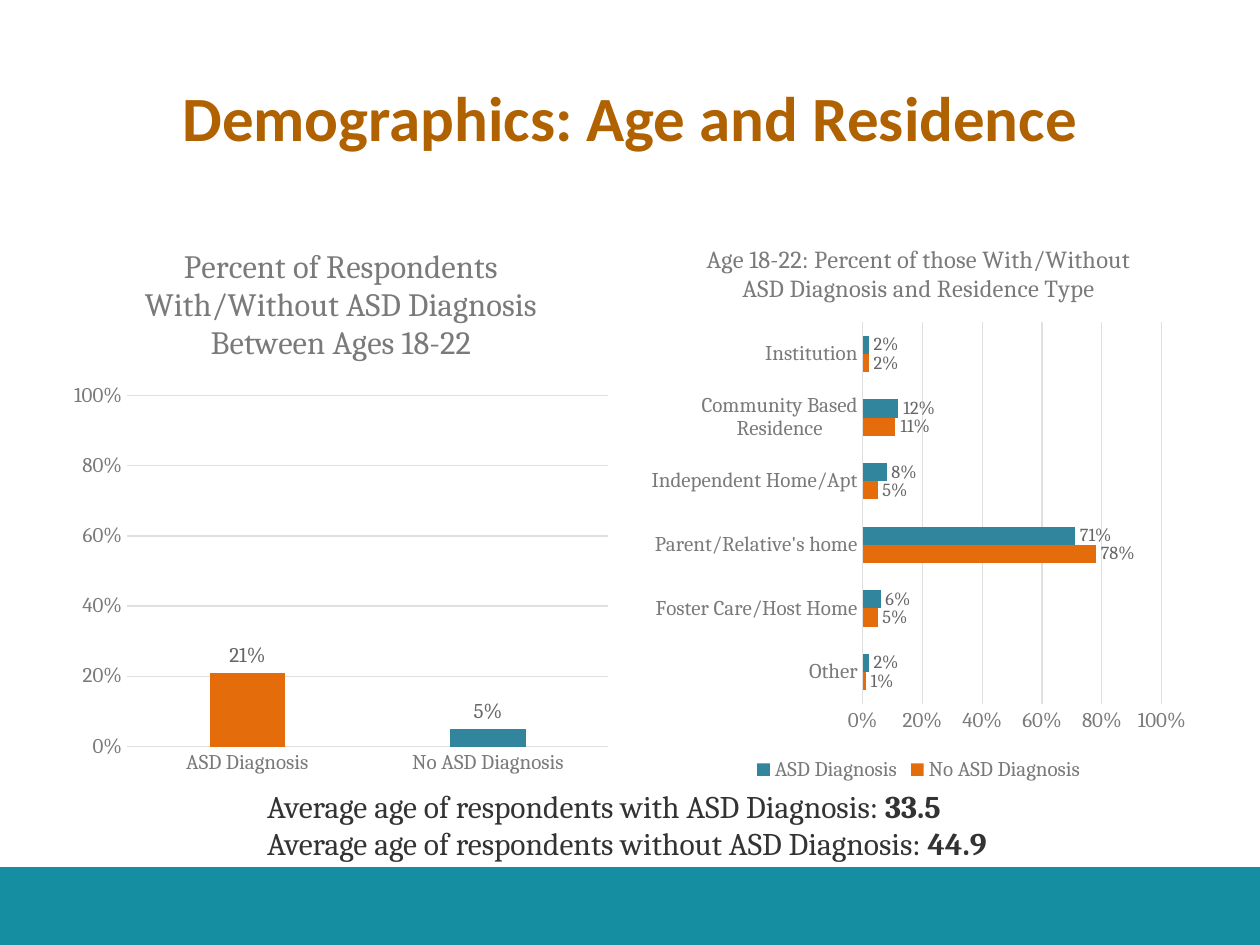
from dataclasses import dataclass, field

import pptx
import pptx.chart.data
import pptx.dml.color
import pptx.enum.chart
import pptx.enum.shapes
import pptx.enum.text
import pptx.util

Pt = pptx.util.Pt
XL = pptx.enum.chart
COLORS = {
    "title": "B06100", "band": "168EA2", "white": "FFFFFF", "text": "333333",
    "axis": "7A7A7A", "label": "666666", "grid": "E0E0E0",
    "asd": "31859C", "no_asd": "E46C0A",
}
BODY_FONT = "Cambria"
CHART_TOP, CHART_WIDTH, CHART_HEIGHT = 126, 318, 323.5


@dataclass
class Series:
    name: str
    values: list[float]
    color: str
    point_colors: dict[int, str] = field(default_factory=dict)


@dataclass
class BarPanel:
    kind: XL.XL_CHART_TYPE
    left: float
    title: str
    title_size: float
    categories: list[str]
    series: list[Series]
    gap: int
    overlap: int
    label_size: float
    legend: bool


def rgb(name: str) -> pptx.dml.color.RGBColor:
    return pptx.dml.color.RGBColor.from_string(COLORS[name])


def set_font(font, size: float, color: str, name: str = BODY_FONT, bold: bool = False) -> None:
    font.size, font.name, font.bold = Pt(size), name, bold
    font.color.rgb = rgb(color)


def set_fill(fill, color: str) -> None:
    fill.solid()
    fill.fore_color.rgb = rgb(color)


def add_box(s, left: float, top: float, width: float, height: float, color: str):
    sp = s.shapes.add_shape(pptx.enum.shapes.MSO_SHAPE.RECTANGLE,
                            Pt(left), Pt(top), Pt(width), Pt(height))
    sp.shadow.inherit = False
    sp.line.fill.background()
    set_fill(sp.fill, color)
    return sp


def set_grid_line(line) -> None:
    line.color.rgb = rgb("grid")
    line.width = Pt(0.75)


def add_bar_panel(s, panel: BarPanel) -> None:
    data = pptx.chart.data.CategoryChartData(number_format="0%")
    data.categories = panel.categories
    for series in panel.series:
        data.add_series(series.name, series.values)
    chart = s.shapes.add_chart(panel.kind, Pt(panel.left), Pt(CHART_TOP),
                               Pt(CHART_WIDTH), Pt(CHART_HEIGHT), data).chart
    set_font(chart.font, 10, "text")

    # Title and legend
    chart.has_title = True
    p = chart.chart_title.text_frame.paragraphs[0]
    p.add_run().text = panel.title
    set_font(p.font, panel.title_size, "axis")
    chart.chart_title.include_in_layout = False
    chart.has_legend = panel.legend
    if panel.legend:
        chart.legend.position = XL.XL_LEGEND_POSITION.BOTTOM
        chart.legend.include_in_layout = False
        set_font(chart.legend.font, 12, "axis")

    # Axes
    for axis in (chart.category_axis, chart.value_axis):
        axis.major_tick_mark = axis.minor_tick_mark = XL.XL_TICK_MARK.NONE
        set_font(axis.tick_labels.font, 12, "axis")
    chart.category_axis.has_major_gridlines = False
    set_grid_line(chart.category_axis.format.line)
    values = chart.value_axis
    values.minimum_scale, values.maximum_scale, values.major_unit = 0, 1, 0.2
    values.tick_labels.number_format = "0%"
    values.tick_labels.number_format_is_linked = False
    values.format.line.fill.background()
    values.has_major_gridlines = True
    set_grid_line(values.major_gridlines.format.line)

    # Bars and their labels
    plot = chart.plots[0]
    plot.gap_width, plot.overlap, plot.vary_by_categories = panel.gap, panel.overlap, False
    for bars, series in zip(plot.series, panel.series):
        bars.invert_if_negative = False
        set_fill(bars.format.fill, series.color)
        for index, color in series.point_colors.items():
            set_fill(bars.points[index].format.fill, color)
        labels = bars.data_labels
        labels.show_value = True
        labels.position = XL.XL_LABEL_POSITION.OUTSIDE_END
        labels.number_format, labels.number_format_is_linked = "0%", False
        set_font(labels.font, panel.label_size, "label")


PANELS = [
    BarPanel(
        XL.XL_CHART_TYPE.COLUMN_CLUSTERED, 36,
        "Percent of Respondents With/Without ASD Diagnosis Between Ages 18-22", 18.6,
        ["ASD Diagnosis", "No ASD Diagnosis"],
        [Series("Series 1", [0.21, 0.05], "asd", {0: "no_asd"})],
        gap=219, overlap=-27, label_size=12, legend=False),
    BarPanel(
        XL.XL_CHART_TYPE.BAR_CLUSTERED, 366,
        "Age 18-22: Percent of those With/Without ASD Diagnosis and Residence Type", 14,
        ["Other", "Foster Care/Host Home", "Parent/Relative's home",
         "Independent Home/Apt", "Community Based Residence", "Institution"],
        [Series("No ASD Diagnosis", [0.01, 0.05, 0.78, 0.05, 0.11, 0.02], "no_asd"),
         Series("ASD Diagnosis", [0.02, 0.06, 0.71, 0.08, 0.12, 0.02], "asd")],
        gap=150, overlap=0, label_size=10.5, legend=True),
]
AVERAGES = [
    ("Average age of respondents with ASD Diagnosis: ", "33.5"),
    ("Average age of respondents without ASD Diagnosis: ", "44.9"),
]


def main() -> None:
    prs = pptx.Presentation()
    prs.slide_width, prs.slide_height = Pt(720), Pt(540)
    s = prs.slides.add_slide(prs.slide_layouts[5])

    # Footer band
    add_box(s, 0, 495.5, 720, 44.5, "band")

    # Slide title
    title = s.shapes.title
    title.left, title.top, title.width, title.height = Pt(36), Pt(21.6), Pt(648), Pt(90)
    tf = title.text_frame
    tf.text = "Demographics: Age and Residence"
    tf.vertical_anchor = pptx.enum.text.MSO_ANCHOR.MIDDLE
    p = tf.paragraphs[0]
    p.alignment = pptx.enum.text.PP_ALIGN.CENTER
    set_font(p.font, 36, "title", "Calibri", bold=True)

    # Charts
    for panel in PANELS:
        add_bar_panel(s, panel)

    # Average ages
    tf = add_box(s, 152.6, 449.5, 474.5, 44, "white").text_frame
    tf.word_wrap = True
    tf.vertical_anchor = pptx.enum.text.MSO_ANCHOR.TOP
    tf.margin_left = tf.margin_top = tf.margin_right = tf.margin_bottom = 0
    for i, (text, age) in enumerate(AVERAGES):
        p = tf.add_paragraph() if i else tf.paragraphs[0]
        p.alignment = pptx.enum.text.PP_ALIGN.LEFT
        set_font(p.font, 18, "text")
        p.add_run().text = text
        r = p.add_run()
        r.text = age
        r.font.bold = True

    prs.save("out.pptx")


if __name__ == "__main__":
    main()
